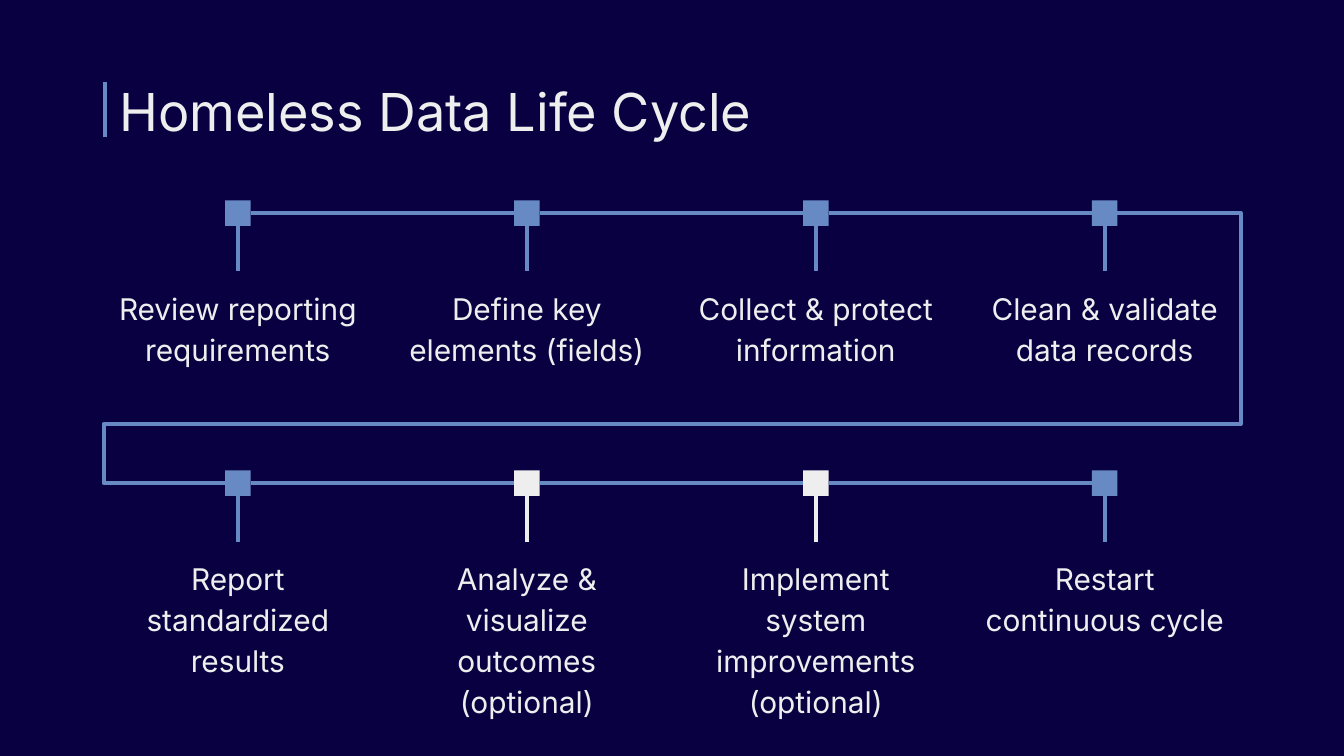
from pptx import Presentation
from pptx import util as u
from pptx.dml.color import RGBColor
from pptx.enum import shapes, text
from pptx.oxml.ns import qn
from lxml import etree

BLUE, WHITE, NAVY = "678AC5", "EEEEEE", "090041"
FONT = "Inter"
MARKER = 0.19
LABEL_WIDTH, LABEL_HEIGHT, LABEL_DROP = 1.98, 0.98, 0.53
TOP, LEFT, BOTTOM, RIGHT = range(4)  # connection sites of a rectangle

STAGES = [
    [("Review reporting requirements", BLUE),
     ("Define key elements (fields)", BLUE),
     ("Collect & protect information", BLUE),
     ("Clean & validate data records", BLUE)],
    [("Report standardized results", BLUE),
     ("Analyze & visualize outcomes (optional)", WHITE),
     ("Implement system improvements (optional)", WHITE),
     ("Restart continuous cycle", BLUE)],
]


def color(hex_code):
    return RGBColor.from_string(hex_code)


def style_text(frame, size):
    frame.word_wrap = True
    frame.auto_size = text.MSO_AUTO_SIZE.NONE
    frame.vertical_anchor = text.MSO_ANCHOR.TOP
    frame.margin_left = frame.margin_right = u.Inches(0.1)
    frame.margin_top = frame.margin_bottom = u.Inches(0.1)
    font = frame.paragraphs[0].runs[0].font
    font.name, font.size = FONT, u.Pt(size)
    font.color.rgb = color(WHITE)


def add_line(slide, start, end, line_color, kind=shapes.MSO_CONNECTOR.STRAIGHT):
    line = slide.shapes.add_connector(kind, *map(u.Inches, (*start, *end)))
    line.line.color.rgb = color(line_color)
    line.line.width = u.Pt(2.25)
    etree.SubElement(line._element.spPr, qn("a:effectLst"))
    return line


def add_heading(slide, left, top, width, height):
    title = slide.shapes.title
    title.left, title.top = u.Inches(left), u.Inches(top)
    title.width, title.height = u.Inches(width), u.Inches(height)
    title.text_frame.text = "Homeless Data Life Cycle"
    title.text_frame.paragraphs[0].alignment = text.PP_ALIGN.LEFT
    style_text(title.text_frame, 28)
    add_line(slide, (left - 0.01, top + 0.53), (left - 0.01, top + 0.12), BLUE)


def add_stage(slide, left, top, label, accent):
    """Add a marker, its stem and the label below; return the marker."""
    center = left + LABEL_WIDTH / 2
    marker = slide.shapes.add_shape(
        shapes.MSO_SHAPE.RECTANGLE, u.Inches(center - MARKER / 2),
        u.Inches(top), u.Inches(MARKER), u.Inches(MARKER))
    marker.shadow.inherit = False
    marker.fill.solid()
    marker.fill.fore_color.rgb = color(accent)
    marker.line.fill.background()

    caption = slide.shapes.add_textbox(
        u.Inches(left), u.Inches(top + LABEL_DROP),
        u.Inches(LABEL_WIDTH), u.Inches(LABEL_HEIGHT))
    caption.text_frame.text = label
    paragraph = caption.text_frame.paragraphs[0]
    paragraph.alignment = text.PP_ALIGN.CENTER
    paragraph.line_spacing = 1.15
    style_text(caption.text_frame, 16)

    stem = add_line(slide, (center, top + MARKER),
                    (center, top + LABEL_DROP), accent)
    stem.begin_connect(marker, BOTTOM)
    stem.end_connect(caption, TOP)
    return marker


def add_stage_row(slide, left, top, width, stages):
    pitch = (width - LABEL_WIDTH) / (len(stages) - 1)
    markers = [add_stage(slide, left + i * pitch, top, label, accent)
               for i, (label, accent) in enumerate(stages)]
    for before, after in zip(markers, markers[1:]):
        link = add_line(slide, (0, 0), (1, 1), BLUE)
        link.begin_connect(before, RIGHT)
        link.end_connect(after, LEFT)
    return markers


def add_return_line(slide, last, first):
    """Wrap from the end of one row to the start of the next."""
    wrap = add_line(slide, (8.31, 1.59), (1.67, 3.59), BLUE,
                    shapes.MSO_CONNECTOR.ELBOW)
    wrap.begin_connect(last, RIGHT)
    wrap.end_connect(first, LEFT)
    geometry = wrap._element.spPr.find(qn("a:prstGeom"))
    geometry.set("prst", "bentConnector5")
    guides = geometry.find(qn("a:avLst"))
    for number, value in enumerate((-13800, 78100, 113600), 1):
        etree.SubElement(guides, qn("a:gd"),
                         name=f"adj{number}", fmla=f"val {value}")


def main():
    deck = Presentation()
    deck.slide_width = u.Inches(10)
    deck.slide_height = deck.slide_width * 9 // 16
    slide = deck.slides.add_slide(deck.slide_layouts.get_by_name("Title Only"))
    slide.background.fill.solid()
    slide.background.fill.fore_color.rgb = color(NAVY)

    add_heading(slide, 0.79, 0.49, 8.43, 0.63)
    upper, lower = [add_stage_row(slide, 0.78, top, 8.43, stages)
                    for top, stages in zip((1.49, 3.5), STAGES)]
    add_return_line(slide, upper[-1], lower[0])
    deck.save("out.pptx")


if __name__ == "__main__":
    main()
